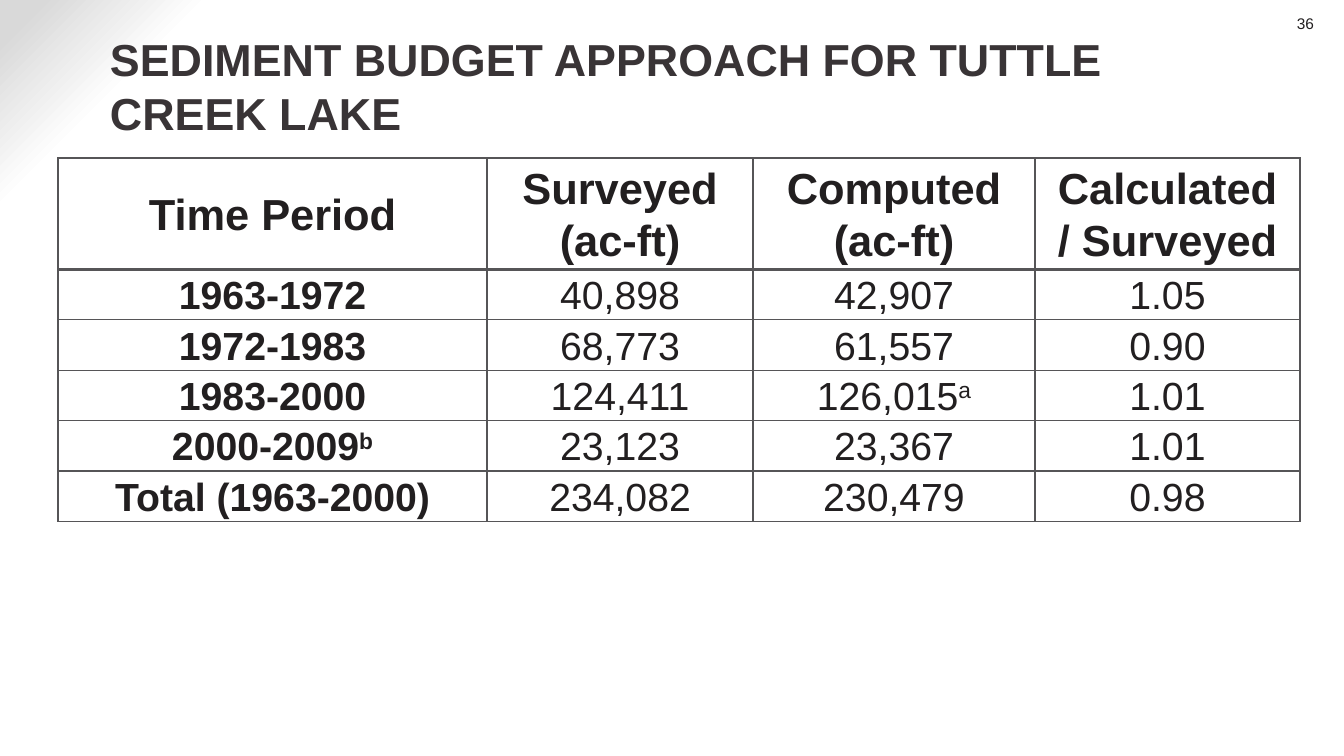
from lxml.etree import SubElement
from pptx import Presentation
from pptx.dml.color import RGBColor
from pptx.enum.text import MSO_ANCHOR as Anchor, PP_ALIGN as Align
from pptx.oxml import parse_xml
from pptx.oxml.ns import nsdecls, qn
from pptx.util import Pt

PX = 914400 / 100.8
COLORS = {"title": "393436", "text": "221F20", "border": "565557",
          "white": "FFFFFF", "corner": "D9D9D9"}


def px(length):
    return round(length * PX)


def write(holder, runs, size, color, bold, align, spacing, insets):
    """Fill a text frame or cell with one paragraph; later runs are superscript."""
    sides = ("margin_left", "margin_top", "margin_right", "margin_bottom")
    for side, inset in zip(sides, insets):
        setattr(holder, side, px(inset))
    frame = getattr(holder, "text_frame", holder)
    paragraph = frame.paragraphs[0]
    paragraph.alignment, paragraph.line_spacing = align, spacing
    for index, text in enumerate(runs):
        run = paragraph.add_run()
        run.text = text
        for name, value in {"name": "Arial", "size": Pt(size), "bold": bold}.items():
            setattr(run.font, name, value)
        run.font.color.rgb = RGBColor.from_string(COLORS[color])
        if index:
            run.font._element.set("baseline", "30000")


presentation = Presentation()
presentation.slide_width, presentation.slide_height = px(1344), px(756)
slide = presentation.slides.add_slide(presentation.slide_layouts[6])

# Background: white with a grey top left corner
slide.background.fill.solid()
solid = slide.background._cSld.bg.bgPr.find(qn("a:solidFill"))
stops = "".join(f'<a:gs pos="{position}000"><a:srgbClr val="{COLORS[color]}"/></a:gs>'
                for position, color in ((87, "white"), (90, "white"), (98, "corner")))
solid.getparent().replace(solid, parse_xml(
    f'<a:gradFill {nsdecls("a")} rotWithShape="1"><a:gsLst>{stops}</a:gsLst>'
    '<a:path path="circle"><a:fillToRect l="100000" t="100000"/></a:path></a:gradFill>'))

# Slide number and title
number_box = slide.shapes.add_textbox(px(1254), px(14), px(60), px(19))
number_box.text_frame.word_wrap = True
write(number_box.text_frame, ["36"], 11, "text", False, Align.RIGHT, 1.0, (10, 0, 0, 0))

title_box = slide.shapes.add_textbox(px(105), px(40), px(1123), px(92))
title_box.text_frame.word_wrap = True
title_box.text_frame.vertical_anchor = Anchor.MIDDLE
write(title_box.text_frame, ["SEDIMENT BUDGET APPROACH FOR TUTTLE CREEK LAKE"],
      32, "title", True, Align.LEFT, 1.0, (5, 0, 0, 0))

# Sediment table; "^" marks the start of a superscript
ROWS = [
    ("Time Period", "Surveyed (ac-ft)", "Computed (ac-ft)", "Calculated / Surveyed"),
    ("1963-1972", "40,898", "42,907", "1.05"),
    ("1972-1983", "68,773", "61,557", "0.90"),
    ("1983-2000", "124,411", "126,015^a", "1.01"),
    ("2000-2009^b", "23,123", "23,367", "1.01"),
    ("Total (1963-2000)", "234,082", "230,479", "0.98"),
]
COLUMN_WIDTHS = (429, 266, 282, 265)
HEADER_HEIGHT, ROW_HEIGHT = 109, 47

table = slide.shapes.add_table(
    len(ROWS), len(COLUMN_WIDTHS), px(58), px(158), px(sum(COLUMN_WIDTHS)),
    px(HEADER_HEIGHT + ROW_HEIGHT * (len(ROWS) - 1))).table
for column, width in zip(table.columns, COLUMN_WIDTHS):
    column.width = px(width)

for row_index, values in enumerate(ROWS):
    header = row_index == 0
    table.rows[row_index].height = px(HEADER_HEIGHT if header else ROW_HEIGHT)
    for column_index, value in enumerate(values):
        cell = table.cell(row_index, column_index)
        cell.vertical_anchor = Anchor.MIDDLE
        write(cell, value.split("^"), 31 if header else 28, "text",
              header or column_index == 0, Align.CENTER, 1.07, (19, 0, 19, 0))
        properties = cell._tc.get_or_add_tcPr()
        for side in "LRTB":
            thick = (row_index, side) in ((0, "B"), (1, "T"))
            line = SubElement(properties, qn(f"a:ln{side}"), w=str(Pt(3 if thick else 1)))
            fill = SubElement(line, qn("a:solidFill"))
            SubElement(fill, qn("a:srgbClr"), val=COLORS["border"])
        cell.fill.solid()
        cell.fill.fore_color.rgb = RGBColor.from_string(COLORS["white"])

presentation.save("out.pptx")
